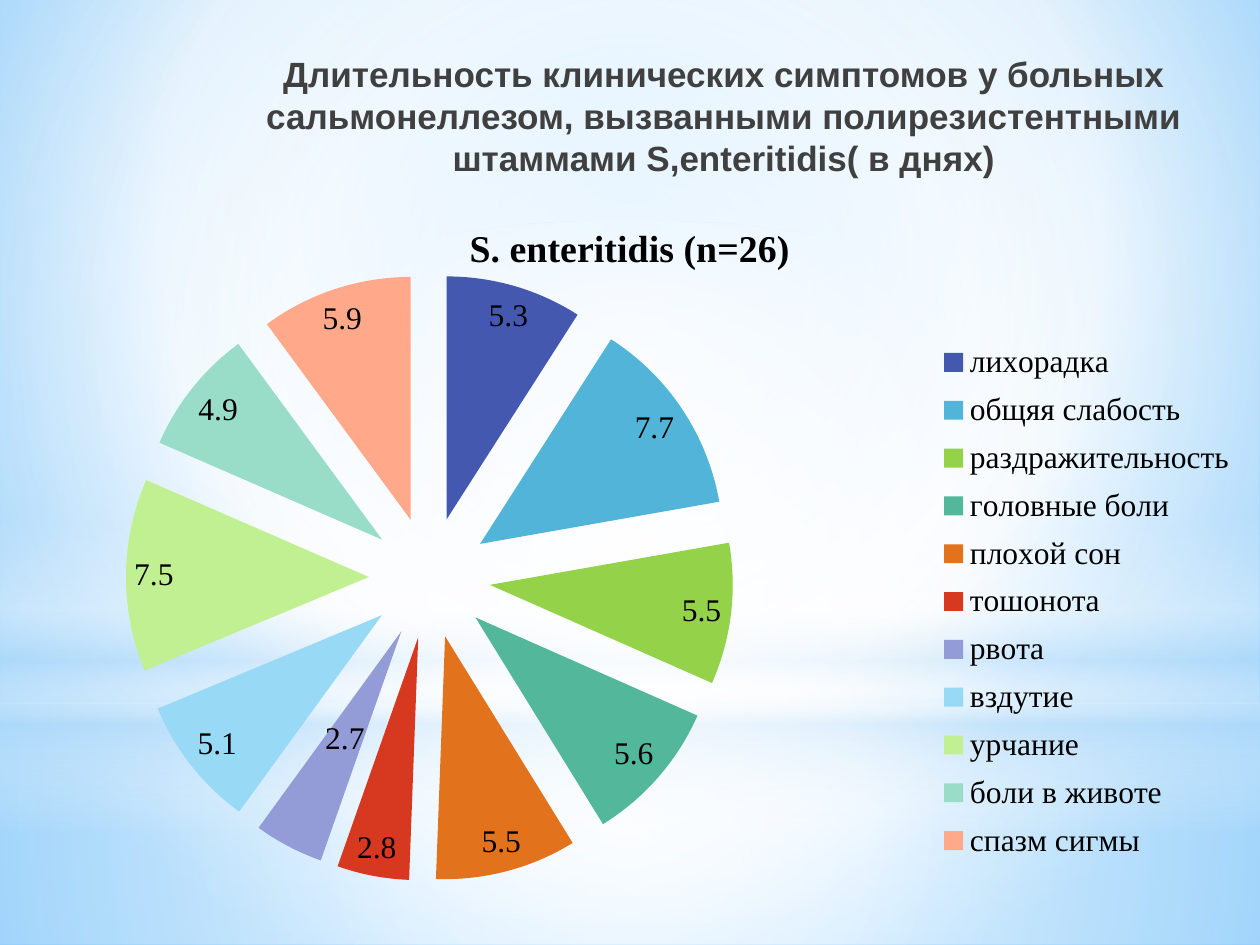
import dataclasses

import lxml.etree
import pptx
import pptx.chart.data
import pptx.dml.color
import pptx.enum.chart
import pptx.enum.shapes
import pptx.enum.text
import pptx.oxml
import pptx.oxml.ns
import pptx.util

Inches = pptx.util.Inches
Pt = pptx.util.Pt
qn = pptx.oxml.ns.qn


@dataclasses.dataclass(frozen=True)
class Theme:
    head: str = "Arial"
    body: str = "Times New Roman"
    ink: str = "404040"
    black: str = "000000"
    white: str = "FFFFFF"
    pale: str = "B4DCFA"
    sky: str = "9ED5FF"
    blue: str = "5BB9FF"
    slices: tuple = ("4558B0", "52B4D9", "94D24A", "52B79B", "E2721B", "D73820",
                     "939CD6", "98D9F5", "C0F092", "99DCC8", "FFA98A")
    head_size: float = 20
    title_size: float = 21.6
    body_size: float = 18


THEME = Theme()
MID = (50, 50, 50, 50)
TITLE = ("Длительность клинических симптомов у больных сальмонеллезом, "
         "вызванными полирезистентными штаммами S,enteritidis( в днях)")
DATA = {
    "лихорадка": 5.3, "общяя слабость": 7.7, "раздражительность": 5.5,
    "головные боли": 5.6, "плохой сон": 5.5, "тошонота": 2.8, "рвота": 2.7,
    "вздутие": 5.1, "урчание": 7.5, "боли в животе": 4.9, "спазм сигмы": 5.9,
}


def rgb(code):
    return pptx.dml.color.RGBColor.from_string(code)


def style(font, face=THEME.body, size=THEME.body_size, color=THEME.black, bold=False):
    font.name, font.size, font.bold = face, Pt(size), bold
    font.color.rgb = rgb(color)


def blend(fill, host, stops, focus=None):
    """Give host a gradient: radial around focus, or else top to bottom.

    Each stop is (position, colour, opacity), all in percent.
    """
    fill.background()
    space = pptx.oxml.ns.nsdecls("a")
    grad = pptx.oxml.parse_xml(f'<a:gradFill {space} rotWithShape="1"><a:gsLst/></a:gradFill>')
    for pos, color, alpha in stops:
        stop = lxml.etree.SubElement(grad[0], qn("a:gs"), pos=str(pos * 1000))
        tint = lxml.etree.SubElement(stop, qn("a:srgbClr"), val=color)
        if alpha < 100:
            lxml.etree.SubElement(tint, qn("a:alpha"), val=str(alpha * 1000))
    if focus:
        ring = lxml.etree.SubElement(grad, qn("a:path"), {"path": "circle"})
        sides = {side: str(part * 1000) for side, part in zip("ltrb", focus)}
        lxml.etree.SubElement(ring, qn("a:fillToRect"), sides)
    else:
        lxml.etree.SubElement(grad, qn("a:lin"), ang="5400000", scaled="0")
    host.replace(host.find(qn("a:noFill")), grad)


def add_glow(slide, kind, top, height, stops, focus=None):
    shape = slide.shapes.add_shape(kind, 0, Inches(top), Inches(10), Inches(height))
    shape.shadow.inherit = False
    blend(shape.fill, shape.element.spPr, stops, focus)
    shape.line.fill.background()


def add_scene(slide):
    white, pale = THEME.white, THEME.pale
    rect = pptx.enum.shapes.MSO_SHAPE.RECTANGLE
    oval = pptx.enum.shapes.MSO_SHAPE.OVAL
    fill = slide.background.fill
    fill.background()
    blend(fill, slide.element.find(".//" + qn("p:bgPr")),
          [(0, THEME.sky, 100), (60, white, 100), (100, THEME.blue, 100)], (20, 10, 20, 60))
    add_glow(slide, rect, 5.58, 1.92, [(0, white, 91), (37, white, 76), (100, pale, 79)], MID)
    add_glow(slide, rect, 0, 5.58, [(0, white, 89), (48, white, 62), (100, pale, 79)], MID)
    add_glow(slide, rect, 4.12, 2.5, [(0, white, 0), (29, white, 30), (45, pale, 40),
                                      (55, white, 26), (65, pale, 60), (100, white, 0)])
    add_glow(slide, oval, 1.75, 5.58, [(0, white, 100), (56, white, 0)], MID)


def add_text(slide, text, left, top, width, height, **look):
    frame = slide.shapes.add_textbox(
        Inches(left), Inches(top), Inches(width), Inches(height)).text_frame
    frame.word_wrap = True
    para = frame.paragraphs[0]
    para.alignment = pptx.enum.text.PP_ALIGN.CENTER
    para.line_spacing = Pt(24)
    run = para.add_run()
    run.text = text
    style(run.font, **look)


def place(host, index, **rules):
    """Fix a chart part by fractions of the chart; index is the layout's rank in host."""
    for old in host.findall(qn("c:layout")):
        host.remove(old)
    layout = lxml.etree.Element(qn("c:layout"))
    host.insert(index, layout)
    manual = lxml.etree.SubElement(layout, qn("c:manualLayout"))
    for name, value in rules.items():
        lxml.etree.SubElement(manual, qn("c:" + name), val=str(value))


def add_pie(slide):
    data = pptx.chart.data.CategoryChartData()
    data.categories = list(DATA)
    data.add_series("Series 1", list(DATA.values()))
    chart = slide.shapes.add_chart(
        pptx.enum.chart.XL_CHART_TYPE.PIE, 0, Inches(1.55), Inches(10), Inches(5.95), data).chart
    style(chart.font)
    chart.has_title = True
    frame = chart.chart_title.text_frame
    frame.text = "S. enteritidis (n=26)"
    style(frame.paragraphs[0].runs[0].font, size=THEME.title_size, bold=True)
    chart.has_legend = True
    chart.legend.position = pptx.enum.chart.XL_LEGEND_POSITION.RIGHT
    chart.legend.include_in_layout = False
    root = chart.element
    place(root.find(".//" + qn("c:plotArea")), 0, layoutTarget="inner",
          xMode="edge", yMode="edge", x=0.01, y=0.105, w=0.662, h=0.81)
    place(root.find(".//" + qn("c:legend")), 1,
          xMode="edge", yMode="edge", x=0.742, y=0.182, w=0.241, h=0.72)

    plot = chart.plots[0]
    plot.vary_by_categories = True
    series = plot.series[0]
    for index, color in enumerate(THEME.slices):
        fill = series.points[index].format.fill
        fill.solid()
        fill.fore_color.rgb = rgb(color)
    burst = lxml.etree.Element(qn("c:explosion"), val="25")
    root.find(".//" + qn("c:dPt")).addprevious(burst)

    spot = pptx.enum.chart.XL_LABEL_POSITION
    labels = series.data_labels
    labels.show_value = True
    labels.position = spot.BEST_FIT
    style(labels.font)
    label = series.points[list(DATA).index("рвота")].data_label
    style(label.font)
    label.position = spot.CENTER


def main():
    deck = pptx.Presentation()
    deck.slide_width, deck.slide_height = Inches(10), Inches(7.5)
    slide = deck.slides.add_slide(deck.slide_layouts[6])
    add_scene(slide)
    add_text(slide, TITLE, 1.61, 0.37, 8.27, 1.25,
             face=THEME.head, size=THEME.head_size, color=THEME.ink, bold=True)
    add_pie(slide)
    deck.save("out.pptx")


if __name__ == "__main__":
    main()
